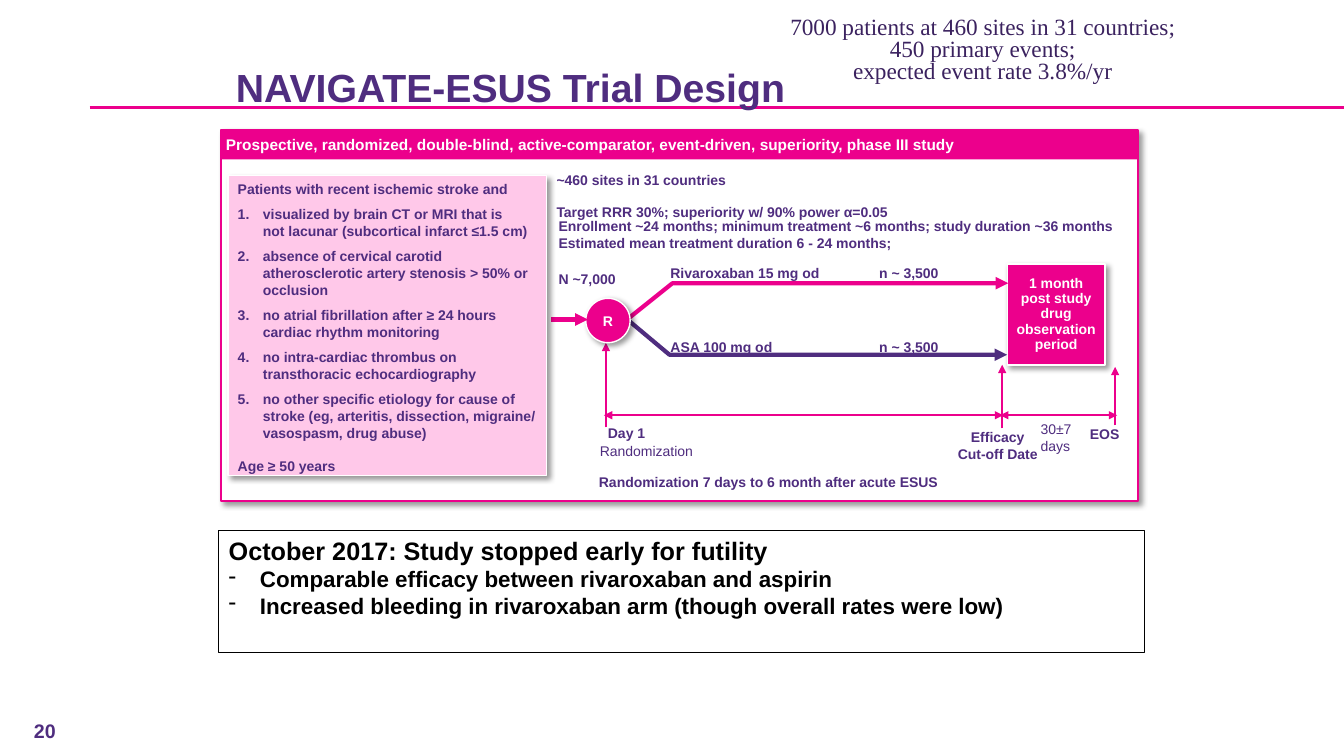
import copy

import pptx
import pptx.chart.data
import pptx.dml.color
import pptx.enum.shapes
import pptx.enum.text
import pptx.oxml
import pptx.oxml.ns
import pptx.util

EMU_PER_PX = 9144
COLORS = {
    "pink": "EC008C",
    "pale": "FFC8E9",
    "purple": "4F2D7F",
    "violet": "3B225F",
    "white": "FFFFFF",
    "black": "000000",
}
ALIGN = pptx.enum.text.PP_ALIGN
ANCHOR = pptx.enum.text.MSO_ANCHOR
SHAPE = pptx.enum.shapes.MSO_SHAPE
qn = pptx.oxml.ns.qn


def px(length):
    return pptx.util.Emu(length * EMU_PER_PX)


def rgb(name):
    return pptx.dml.color.RGBColor.from_string(COLORS[name])


def append_xml(parent, tag, content="", **attributes):
    values = "".join(f' {key}="{value}"' for key, value in attributes.items())
    xml = f'<a:{tag} {pptx.oxml.ns.nsdecls("a")}{values}>{content}</a:{tag}>'
    parent.append(pptx.oxml.parse_xml(xml))


def write(frame, text, size=10, bold=True, color="purple", font="Arial",
          align=ALIGN.LEFT, before=0, spacing=None, hanging=0, bullet=None, tab=0):
    paragraph = frame.paragraphs[0]
    if paragraph.runs:
        paragraph = frame.add_paragraph()
    paragraph.text = text
    properties = paragraph._p.get_or_add_pPr()
    if bullet:
        properties.set("marL", str(px(hanging)))
        properties.set("indent", str(-px(hanging)))
        if bullet == "number":
            append_xml(properties, "buAutoNum", type="arabicPeriod")
        else:
            append_xml(properties, "buChar", char=bullet)
    if tab:
        append_xml(properties, "tabLst", f'<a:tab pos="{px(tab)}" algn="l"/>')
    paragraph.alignment = align
    if before:
        paragraph.space_before = pptx.util.Pt(before)
    if spacing:
        paragraph.line_spacing = spacing
    for run in paragraph.runs:
        run.font.size = pptx.util.Pt(size)
        run.font.bold = bold
        run.font.name = font
        run.font.color.rgb = rgb(color)
    for line_break in paragraph._p.findall(qn("a:br")):
        line_break.insert(0, copy.deepcopy(paragraph.runs[0]._r.rPr))


def set_frame(frame, inset_x=0, inset_y=0, anchor=ANCHOR.TOP, wrap=True):
    frame.margin_left = frame.margin_right = px(inset_x)
    frame.margin_top = frame.margin_bottom = px(inset_y)
    frame.vertical_anchor = anchor
    frame.word_wrap = wrap
    return frame


def add_label(slide, box, text, anchor=ANCHOR.TOP, wrap=True, **style):
    label = slide.shapes.add_textbox(*map(px, box))
    frame = set_frame(label.text_frame, anchor=anchor, wrap=wrap)
    write(frame, text, **style)
    return frame


def add_panel(slide, box, fill=None, line=None, width=1, shadow=False,
              kind=SHAPE.RECTANGLE, **layout):
    panel = slide.shapes.add_shape(kind, *map(px, box))
    panel.shadow.inherit = False
    if fill:
        panel.fill.solid()
        panel.fill.fore_color.rgb = rgb(fill)
    else:
        panel.fill.background()
    if line:
        panel.line.color.rgb = rgb(line)
        panel.line.width = pptx.util.Pt(width)
    else:
        panel.line.fill.background()
    if shadow:
        color = f'<a:srgbClr val="{COLORS["black"]}"><a:alpha val="40000"/></a:srgbClr>'
        append_xml(panel.element.spPr.find(qn("a:effectLst")), "outerShdw", color,
                   blurRad=pptx.util.Pt(4), dist=pptx.util.Pt(3), dir=2700000,
                   algn="tl", rotWithShape=0)
    return set_frame(panel.text_frame, **layout)


def style_line(stroke, color, width, ends):
    stroke.line.color.rgb = rgb(color)
    stroke.line.width = pptx.util.Pt(width)
    for end in ends:
        append_xml(stroke.element.spPr.find(qn("a:ln")), end, type="triangle")


def add_line(slide, start, end, width=1.5, ends=("tailEnd",)):
    line = slide.shapes.add_connector(
        pptx.enum.shapes.MSO_CONNECTOR.STRAIGHT, *map(px, start + end))
    style_line(line, "pink", width, ends)
    append_xml(line.element.spPr, "effectLst")


def add_arm(slide, points, color):
    builder = slide.shapes.build_freeform(*points[0], scale=EMU_PER_PX)
    builder.add_line_segments(points[1:], close=False)
    arm = builder.convert_to_shape()
    arm.shadow.inherit = False
    arm.fill.background()
    style_line(arm, color, 3, ("tailEnd",))


def add_heading(slide):
    add_line(slide, (89, 107), (1333, 107), 2.25, ())
    add_label(slide, (18, 713, 53, 24), "20", ANCHOR.BOTTOM, size=14, align=ALIGN.CENTER)
    add_label(slide, (234, 63, 905, 47), "NAVIGATE-ESUS Trial Design", ANCHOR.BOTTOM, size=28)
    note_style = dict(size=16.6, bold=False, color="violet", font="Times New Roman",
                      align=ALIGN.CENTER, spacing=0.8)
    note = add_label(slide, (783, 17, 383, 75),
                     "7000 patients at 460 sites in 31 countries; 450 primary events;",
                     **note_style)
    write(note, "expected event rate 3.8%/yr", **note_style)


def add_criteria(slide):
    criteria = add_panel(slide, (226, 174, 316, 298), "pale", "white", shadow=True,
                         inset_x=10, inset_y=5)
    write(criteria, "Patients with recent ischemic stroke and")
    for criterion in (
        "visualized by brain CT or MRI that is\nnot lacunar (subcortical infarct ≤1.5 cm)",
        "absence of cervical carotid atherosclerotic artery stenosis > 50% or occlusion",
        "no atrial fibrillation after ≥ 24 hours cardiac rhythm monitoring",
        "no intra-cardiac thrombus on transthoracic echocardiography",
        "no other specific etiology for cause of stroke "
        "(eg, arteritis, dissection, migraine/ vasospasm, drug abuse)",
    ):
        write(criteria, criterion, before=6, hanging=25, bullet="number")
    write(criteria, "Age ≥ 50 years", before=12)


def add_design(slide):
    add_panel(slide, (219, 129, 910, 368), "white", "pink", 1.5, shadow=True)
    banner = add_panel(slide, (219, 129, 910, 29), "pink", inset_x=5, inset_y=5,
                       anchor=ANCHOR.MIDDLE)
    write(banner, "Prospective, randomized, double-blind, active-comparator, "
          "event-driven, superiority, phase III study", size=11, color="white")
    observation = add_panel(slide, (999, 262, 97, 100), "pink", "white", shadow=True,
                            inset_x=6, inset_y=5, anchor=ANCHOR.MIDDLE)
    write(observation, "1 month\npost study drug\nobservation period", color="white",
          align=ALIGN.CENTER, spacing=0.9)

    for box, text, style in (
        ((552, 170, 583, 15), "~460 sites in 31 countries", {}),
        ((552, 202, 583, 15), "Target RRR 30%; superiority w/ 90% power α=0.05", {}),
        ((554, 216, 575, 21), "Enrollment ~24 months; minimum treatment ~6 months; "
         "study duration ~36 months\nEstimated mean treatment duration 6 - 24 months;", {}),
        ((554, 268, 98, 17), "N ~7,000", {}),
        ((665, 262, 330, 17), "Rivaroxaban 15 mg od\tn ~ 3,500", dict(tab=207)),
        ((665, 333, 332, 19), "ASA 100 mg od\tn ~ 3,500", dict(tab=207, spacing=1.15)),
        ((603, 421, 37, 17), "Day 1", dict(wrap=False)),
        ((595, 439, 134, 17), "Randomization", dict(bold=False)),
        ((935, 425, 109, 34), "Efficacy\nCut-off Date", dict(align=ALIGN.CENTER)),
        ((1032, 417, 41, 34), "30±7 days", dict(anchor=ANCHOR.BOTTOM, bold=False)),
        ((1081, 422, 30, 17), "EOS", dict(wrap=False)),
        ((594, 470, 358, 15), "Randomization 7 days to 6 month after acute ESUS", {}),
    ):
        add_label(slide, box, text, **style)

    add_arm(slide, [(622, 317), (667, 281), (1000, 281)], "pink")
    add_arm(slide, [(621, 316), (664, 352), (999, 352)], "purple")
    for x, bottom, top in ((601, 424, 340), (994, 425, 362), (1106, 422, 364)):
        add_line(slide, (x, bottom), (x, top))
    for left, right in ((599, 995), (992, 1108)):
        add_line(slide, (left, 412), (right, 412), ends=("headEnd", "tailEnd"))

    randomization = add_panel(slide, (581, 296, 44, 44), "pink", "white", shadow=True,
                              kind=SHAPE.OVAL, anchor=ANCHOR.MIDDLE, wrap=False)
    write(randomization, "R", color="white", align=ALIGN.CENTER)
    add_line(slide, (547, 317), (583, 317), 3)


def add_outcome(slide):
    outcome = add_panel(slide, (217, 526, 918, 121), line="black", width=0.75,
                        inset_x=10, inset_y=5)
    write(outcome, "October 2017: Study stopped early for futility", size=18, color="black")
    for finding in ("Comparable efficacy between rivaroxaban and aspirin",
                    "Increased bleeding in rivaroxaban arm (though overall rates were low)"):
        write(outcome, finding, size=16, color="black", hanging=31, bullet="-")


def main():
    deck = pptx.Presentation()
    deck.slide_width, deck.slide_height = px(1333), px(750)
    slide = deck.slides.add_slide(deck.slide_layouts[6])
    add_heading(slide)
    add_design(slide)
    add_criteria(slide)
    add_outcome(slide)
    deck.save("out.pptx")


if __name__ == "__main__":
    main()
